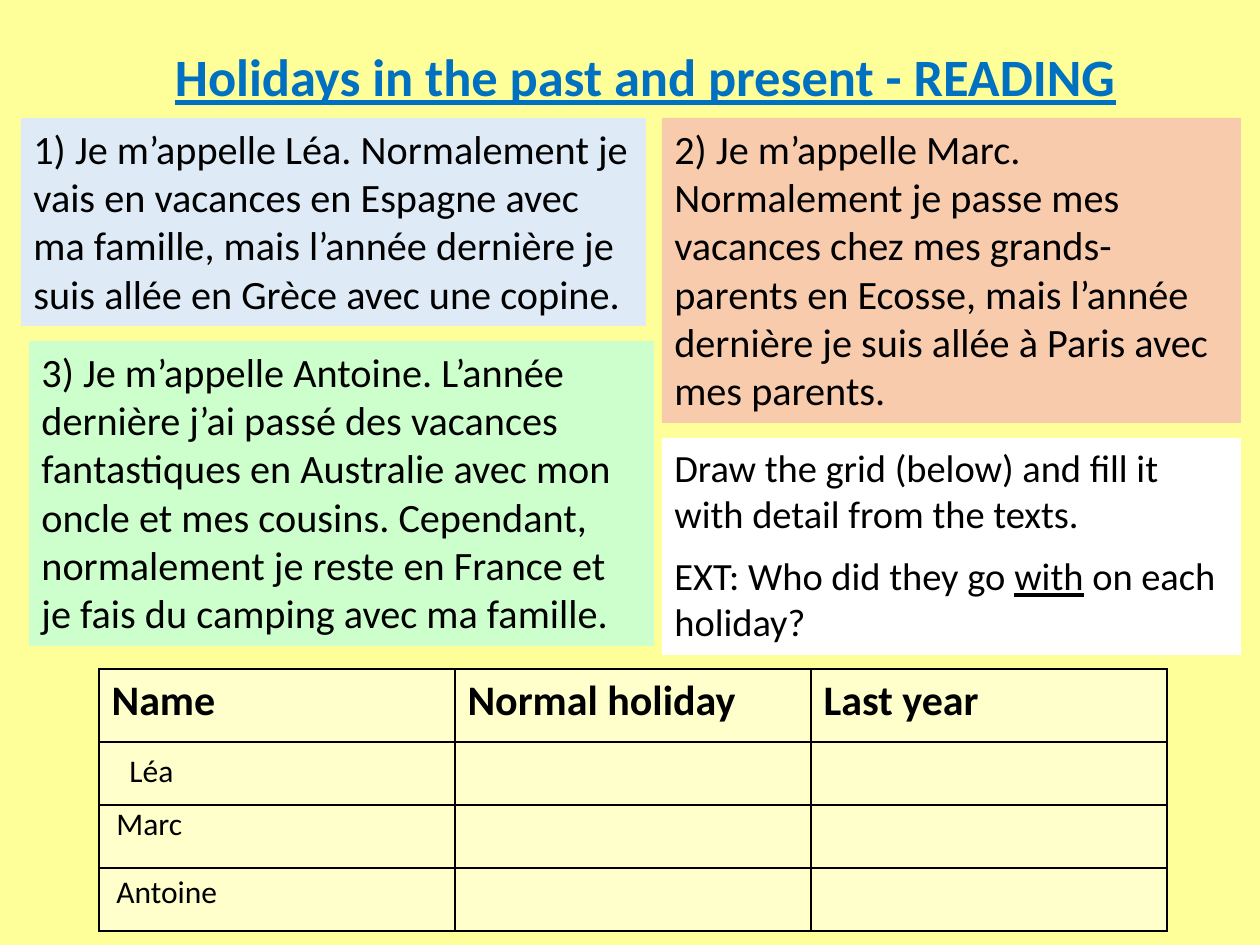
from lxml import etree
from pptx import Presentation, util as u
from pptx.dml.color import RGBColor
from pptx.enum import shapes, text
from pptx.oxml.ns import qn

PX = u.Inches(1) / 126
FONT = "Calibri"
COLORS = {
    "background": "FFFF99",
    "title": "0070C0",
    "text": "000000",
    "border": "000000",
    "lea": "DEEBF7",
    "marc": "F8CBAD",
    "antoine": "CCFFCC",
    "task": "FFFFFF",
    "cell": "FFFFCC",
}
TEXTS = [
    ("lea", (21, 118, 625, 208),
     "1) Je m’appelle Léa. Normalement je vais en vacances en Espagne avec ma famille, "
     "mais l’année dernière je suis allée en Grèce avec une copine."),
    ("marc", (662, 118, 579, 305),
     "2) Je m’appelle Marc. Normalement je passe mes vacances chez mes grands-parents en Ecosse, "
     "mais l’année dernière je suis allée à Paris avec mes parents."),
    ("antoine", (29, 341, 625, 305),
     "3) Je m’appelle Antoine. L’année dernière j’ai passé des vacances fantastiques en Australie "
     "avec mon oncle et mes cousins. Cependant, normalement je reste en France et je fais du "
     "camping avec ma famille."),
]
HEADINGS = ["Name", "Normal holiday", "Last year"]
NAMES = [("Léa", 18, 76), ("Marc", 5, 129), ("Antoine", 5, 197)]  # offsets in the grid


def px(length):
    return u.Emu(round(length * PX))


def color(name):
    return RGBColor.from_string(COLORS[name])


def fill_with(thing, name):
    thing.fill.solid()
    thing.fill.fore_color.rgb = color(name)


def style(font, size, name="text", bold=False):
    font.name, font.size, font.bold = FONT, u.Pt(size), bold
    font.color.rgb = color(name)


def add_text(slide, box, content, size, color_name="text", bold=False):
    shape = slide.shapes.add_textbox(*map(px, box))
    shape.text_frame.word_wrap = True
    shape.text_frame.text = content
    for paragraph in shape.text_frame.paragraphs:
        for run in paragraph.runs:
            style(run.font, size, color_name, bold)
    return shape


def add_title(slide, box):
    frame = add_text(slide, box, "Holidays in the past and present - READING",
                     30, "title", True).text_frame
    frame.vertical_anchor = text.MSO_ANCHOR.MIDDLE
    paragraph = frame.paragraphs[0]
    paragraph.alignment = text.PP_ALIGN.CENTER
    paragraph.line_spacing = 0.9
    paragraph.runs[0].font.underline = True


def add_panel(slide, box, content, size, fill):
    shape = add_text(slide, box, content, size)
    fill_with(shape, fill)
    return shape


def add_task(slide, box):
    instruction = "Draw the grid (below) and fill it with detail from the texts."
    frame = add_panel(slide, box, instruction, 22, "task").text_frame
    extension = frame.add_paragraph()
    extension.space_before = u.Pt(9)
    for part in ("EXT: Who did they go ", "with", " on each holiday?"):
        run = extension.add_run()
        run.text = part
        style(run.font, 22)
        run.font.underline = part == "with"


def add_borders(cell):
    properties = cell._tc.get_or_add_tcPr()
    for index, side in enumerate(("lnL", "lnR", "lnT", "lnB")):
        line = etree.Element(qn(f"a:{side}"), w=str(u.Pt(1)))
        solid = etree.SubElement(line, qn("a:solidFill"))
        etree.SubElement(solid, qn("a:srgbClr"), val=COLORS["border"])
        properties.insert(index, line)


def add_grid(slide, box):
    """Add the answer table, with the names laid over its first column."""
    left, top, width, height = box
    header_height = 73
    row_height = (height - header_height) / len(NAMES)
    table = slide.shapes.add_table(len(NAMES) + 1, len(HEADINGS), *map(px, box)).table
    for column in table.columns:
        column.width = px(width / len(HEADINGS))
    for index, row in enumerate(table.rows):
        row.height = px(row_height if index else header_height)
    for cell in table.iter_cells():
        fill_with(cell, "cell")
        add_borders(cell)
    for cell, heading in zip(table.rows[0].cells, HEADINGS):
        cell.text = heading
        style(cell.text_frame.paragraphs[0].runs[0].font, 24, bold=True)
    for name, x, y in NAMES:
        add_text(slide, (left + x, top + y, 309, 50), name, 18)


def main():
    presentation = Presentation()
    presentation.slide_width, presentation.slide_height = px(1260), px(945)
    slide = presentation.slides.add_slide(presentation.slide_layouts[6])
    fill_with(slide.background, "background")
    add_title(slide, (76, 0, 1139, 160))
    for fill, box, content in TEXTS:
        add_panel(slide, box, content, 23, fill)
    add_task(slide, (662, 438, 579, 217))
    add_grid(slide, (99, 669, 1068, 262))
    presentation.save("out.pptx")


if __name__ == "__main__":
    main()
